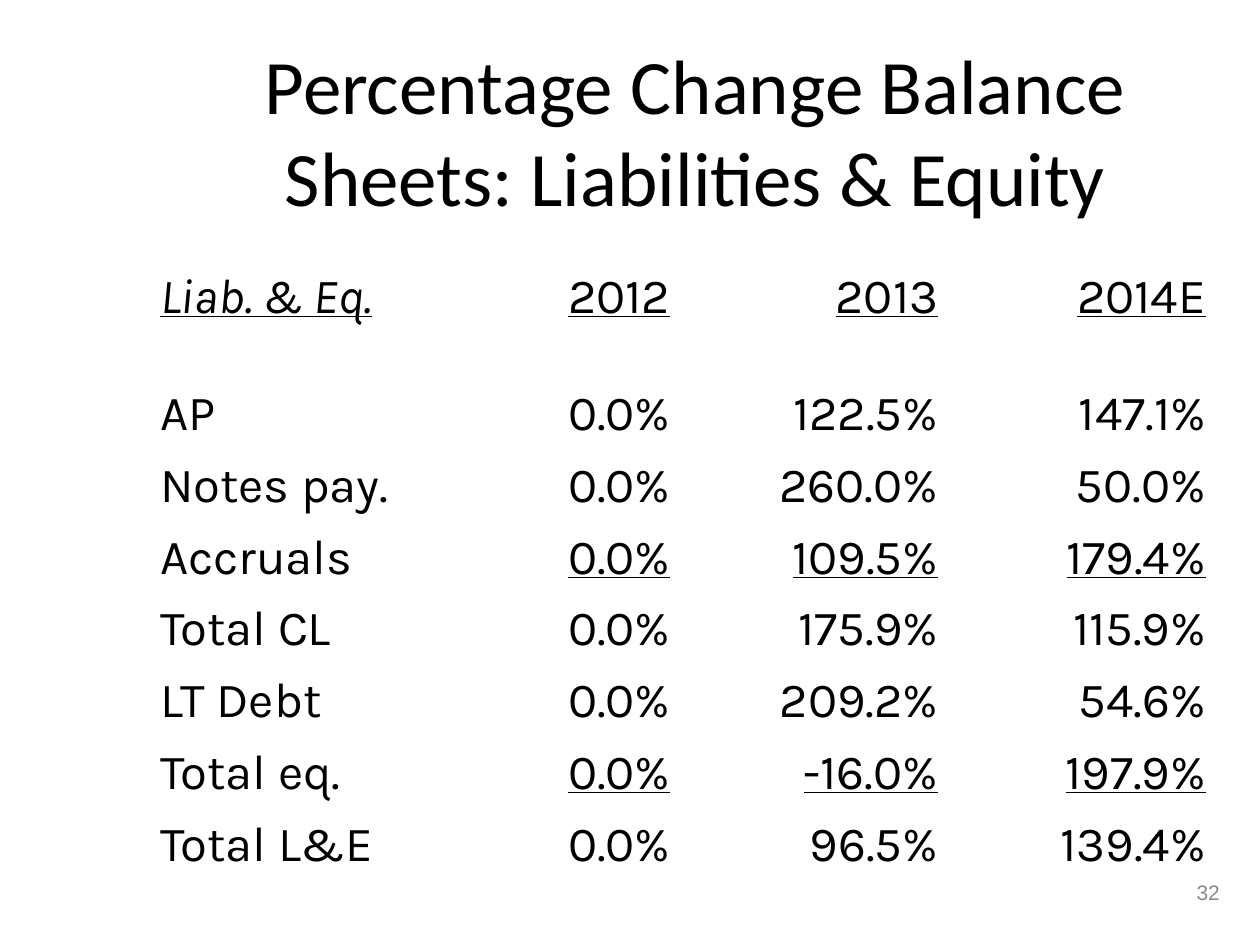
import pptx
import pptx.util
import pptx.dml.color
import pptx.enum.text

Inches = pptx.util.Inches
ALIGN = pptx.enum.text.PP_ALIGN
MIDDLE = pptx.enum.text.MSO_ANCHOR.MIDDLE


def style(p, name, size, color, align):
    p.alignment = align
    p.font.name = name
    p.font.size = pptx.util.Pt(size)
    p.font.color.rgb = pptx.dml.color.RGBColor.from_string(color)


prs = pptx.Presentation()
prs.slide_width, prs.slide_height = Inches(10), Inches(7.5)
s = prs.slides.add_slide(prs.slide_layouts[5])

# Title
title = s.shapes.title
title.left, title.top = Inches(1.26), Inches(0.23)
title.width, title.height = Inches(8.52), Inches(1.6)
tf = title.text_frame
tf.text = "Percentage Change Balance Sheets: Liabilities & Equity"
tf.word_wrap = True
tf.auto_size = pptx.enum.text.MSO_AUTO_SIZE.NONE
tf.vertical_anchor = MIDDLE
style(tf.paragraphs[0], "Calibri", 44, "000000", ALIGN.CENTER)

# Table of percentage changes
rows = [
    ("Liab. & Eq.", "2012", "2013", "2014E"),
    ("AP", "0.0%", "122.5%", "147.1%"),
    ("Notes pay.", "0.0%", "260.0%", "50.0%"),
    ("Accruals", "0.0%", "109.5%", "179.4%"),
    ("Total CL", "0.0%", "175.9%", "115.9%"),
    ("LT Debt", "0.0%", "209.2%", "54.6%"),
    ("Total eq.", "0.0%", "-16.0%", "197.9%"),
    ("Total L&E", "0.0%", "96.5%", "139.4%"),
]
last_before_total = ("Accruals", "Total eq.")
header_height, row_height = 0.93, 0.57
table = s.shapes.add_table(
    len(rows), len(rows[0]), Inches(1.17), Inches(2.08), Inches(8.5),
    Inches(header_height + row_height * (len(rows) - 1))).table
table.first_row = table.horz_banding = False

for i, row in enumerate(rows):
    table.rows[i].height = Inches(row_height if i else header_height)
    for j, text in enumerate(row):
        cell = table.cell(i, j)
        cell.fill.background()
        cell.text = text
        p = cell.text_frame.paragraphs[0]
        style(p, "Karla", 28, "000000", ALIGN.RIGHT if j else ALIGN.LEFT)
        p.font.italic = i == 0 and j == 0
        p.font.underline = i == 0 or (j > 0 and row[0] in last_before_total)

# Slide number
number = s.shapes.add_textbox(Inches(7.7), Inches(6.83), Inches(2.08), Inches(0.5))
tf = number.text_frame
tf.text = "32"
tf.word_wrap = True
tf.vertical_anchor = MIDDLE
style(tf.paragraphs[0], "Arial", 12, "898989", ALIGN.RIGHT)

prs.save("out.pptx")
